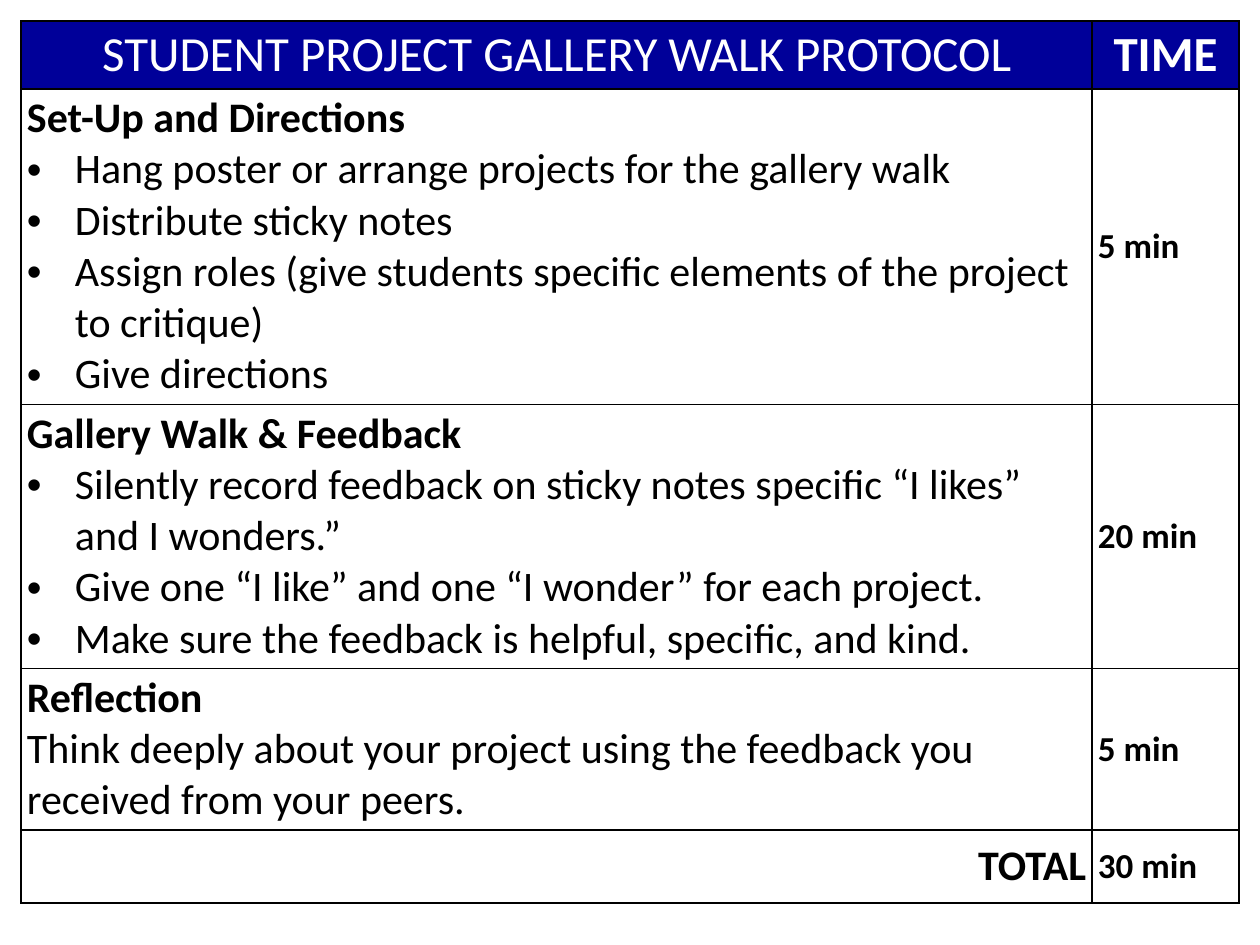
from lxml.etree import SubElement
from pptx import Presentation
from pptx.dml.color import RGBColor
from pptx.enum.text import MSO_ANCHOR as Anchor, PP_ALIGN as Align
from pptx.oxml.ns import qn
from pptx.util import Pt

HEADINGS = ["STUDENT PROJECT GALLERY WALK PROTOCOL", "TIME"]
STEPS = [
    {
        "name": "Set-Up and Directions",
        "bullets": [
            "Hang poster or arrange projects for the gallery walk",
            "Distribute sticky notes",
            "Assign roles (give students specific elements of the project to critique)",
            "Give directions",
        ],
        "time": "5 min",
    },
    {
        "name": "Gallery Walk & Feedback",
        "bullets": [
            "Silently record feedback on sticky notes specific “I likes” and I wonders.”",
            "Give one “I like” and one “I wonder” for each project.",
            "Make sure the feedback is helpful, specific, and kind.",
        ],
        "time": "20 min",
    },
    {
        "name": "Reflection",
        "body": "Think deeply about your project using the feedback you received from your peers.",
        "time": "5 min",
    },
]
TOTAL = ["TOTAL", "30 min"]

COLORS = {"header": "000099", "paper": "FFFFFF", "ink": "000000"}
FONT = "Calibri"
HEADER_SIZE, BODY_SIZE, TIME_SIZE = 28, 24, 20

SCALE = 914400 / 126
LEFT, TOP = 21, 21
COLUMNS = [1071, 147]
ROWS = [66, 315, 263, 160, 73]
INSET_X, INSET_Y = 6, 4
INDENT = 48


def px(length):
    return round(length * SCALE)


def add_bullet(para):
    properties = para._p.get_or_add_pPr()
    properties.set("marL", str(px(INDENT)))
    properties.set("indent", str(-px(INDENT)))
    SubElement(properties, qn("a:buFont"), typeface="Arial")
    SubElement(properties, qn("a:buChar"), char="•")


def write(cell, text, *, size=BODY_SIZE, bold=False, color="ink", align=Align.LEFT, bullet=False):
    """Put text in the cell's first paragraph, or in a new one if that is taken."""
    frame = cell.text_frame
    para = frame.add_paragraph() if frame.text else frame.paragraphs[0]
    para.alignment = align
    if bullet:
        add_bullet(para)
    span = para.add_run()
    span.text = text
    span.font.name = FONT
    span.font.size = Pt(size)
    span.font.bold = bold
    span.font.color.rgb = RGBColor.from_string(COLORS[color])


def style_cell(cell, fill, anchor):
    cell.margin_left = cell.margin_right = px(INSET_X)
    cell.margin_top = cell.margin_bottom = px(INSET_Y)
    cell.vertical_anchor = anchor
    properties = cell._tc.get_or_add_tcPr()
    for side in ("a:lnL", "a:lnR", "a:lnT", "a:lnB"):
        line = SubElement(properties, qn(side), w=str(Pt(1)))
        solid = SubElement(line, qn("a:solidFill"))
        SubElement(solid, qn("a:srgbClr"), val=COLORS["ink"])
    cell.fill.solid()
    cell.fill.fore_color.rgb = RGBColor.from_string(COLORS[fill])


def main():
    deck = Presentation()
    deck.slide_width, deck.slide_height = px(1260), px(945)
    page = deck.slides.add_slide(deck.slide_layouts[6])
    table = page.shapes.add_table(
        len(ROWS), len(COLUMNS), px(LEFT), px(TOP), px(sum(COLUMNS)), px(sum(ROWS))
    ).table
    table.first_row = table.horz_banding = False
    for column, width in zip(table.columns, COLUMNS):
        column.width = px(width)
    for index, height in enumerate(ROWS):
        table.rows[index].height = px(height)
        for cell in table.rows[index].cells:
            if index == 0:
                style_cell(cell, "header", Anchor.TOP)
            else:
                style_cell(cell, "paper", Anchor.MIDDLE)

    for index, heading in enumerate(HEADINGS):
        write(table.cell(0, index), heading, size=HEADER_SIZE, bold=index == 1,
              color="paper", align=Align.CENTER)
    for row, step in enumerate(STEPS, start=1):
        activity = table.cell(row, 0)
        write(activity, step["name"], bold=True)
        for bullet in step.get("bullets", []):
            write(activity, bullet, bullet=True)
        if "body" in step:
            write(activity, step["body"])
        write(table.cell(row, 1), step["time"], size=TIME_SIZE, bold=True)
    last = len(ROWS) - 1
    write(table.cell(last, 0), TOTAL[0], bold=True, align=Align.RIGHT)
    write(table.cell(last, 1), TOTAL[1], size=TIME_SIZE, bold=True)

    deck.save("out.pptx")


if __name__ == "__main__":
    main()
